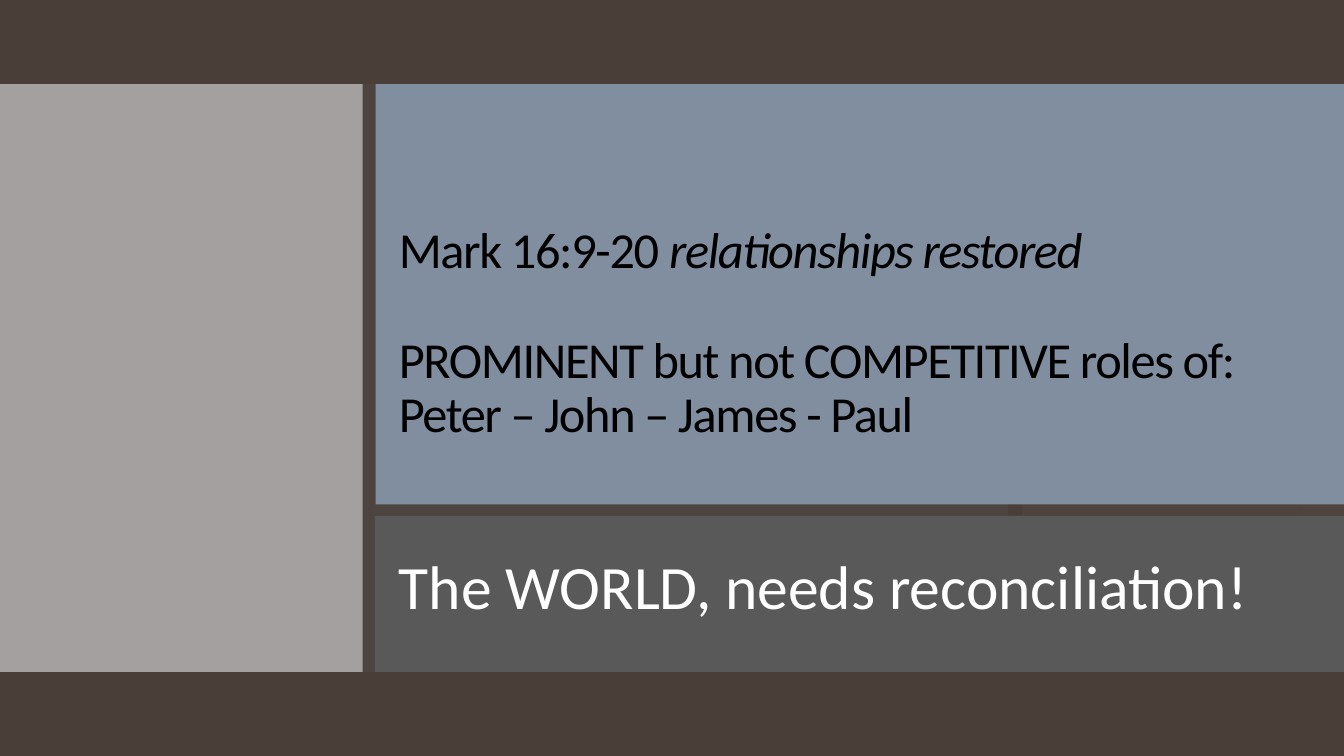
from dataclasses import dataclass

from lxml.etree import SubElement
from pptx import Presentation
from pptx.dml.color import RGBColor
from pptx.enum.shapes import MSO_SHAPE as Preset
from pptx.enum.text import MSO_ANCHOR as Anchor
from pptx.oxml.ns import qn
from pptx.util import Cm, Pt


@dataclass(frozen=True)
class Theme:
    """Colours, font and type sizes of the slide."""
    brown: str = "4A3F38"
    blue: str = "818E9F"
    silver: str = "C8C8C8"
    grey: str = "595959"
    black: str = "000000"
    white: str = "FFFFFF"
    font: str = "Calibri"
    title_size: int = 36
    body_size: int = 44


THEME = Theme()
WIDTH, HEIGHT = 33.87, 19.05
BAND_TOP, BAND_HEIGHT = 2.12, 14.81
TEXT_LEFT = 9.8


def add_panel(page, left, top, width, height, color, opacity=100):
    """Draw a borderless rectangle with an opacity in percent."""
    panel = page.shapes.add_shape(
        Preset.RECTANGLE, Cm(left), Cm(top), Cm(width), Cm(height))
    panel.shadow.inherit = False
    panel.line.fill.background()
    panel.fill.solid()
    panel.fill.fore_color.rgb = RGBColor.from_string(color)
    if opacity < 100:
        shade = panel.fill._xPr.find(qn("a:solidFill"))[0]
        SubElement(shade, qn("a:alpha"), val=str(opacity * 1000))


def add_text(page, top, width, height, lines, size, color, anchor, spacing=0):
    """Write lines, each a gap before in points and (text, italic) spans."""
    box = page.shapes.add_textbox(Cm(TEXT_LEFT), Cm(top), Cm(width), Cm(height))
    frame = box.text_frame
    frame.word_wrap = True
    frame.vertical_anchor = anchor
    for index, (gap, spans) in enumerate(lines):
        para = frame.add_paragraph() if index else frame.paragraphs[0]
        para.line_spacing = 0.9
        para.space_before = Pt(gap)
        para.font.name = THEME.font
        para.font.size = Pt(size)
        para.font.color.rgb = RGBColor.from_string(color)
        for text, italic in spans:
            span = para.add_run()
            span.text = text
            span.font.italic = italic
            if spacing:
                span.font._element.set("spc", str(spacing * 100))


def add_backdrop(page):
    """Lay the master bands and the brown veil that covers them."""
    page.background.fill.solid()
    page.background.fill.fore_color.rgb = RGBColor.from_string(THEME.brown)
    for left, right, color, opacity in (
            (0, 9.58, THEME.blue, 95),
            (32.82, WIDTH, THEME.blue, 40),
            (0, 25.4, THEME.blue, 100),
            (25.76, WIDTH, THEME.silver, 50)):
        add_panel(page, left, BAND_TOP, right - left, BAND_HEIGHT, color, opacity)
    add_panel(page, 0, 0, WIDTH, HEIGHT, THEME.brown, 93)


def main():
    """Build the slide and save it."""
    deck = Presentation()
    deck.slide_width, deck.slide_height = Cm(WIDTH), Cm(HEIGHT)
    page = deck.slides.add_slide(deck.slide_layouts[6])
    add_backdrop(page)
    add_panel(page, 0, BAND_TOP, 9.14, BAND_HEIGHT, THEME.silver, 70)
    add_panel(page, 9.47, BAND_TOP, WIDTH - 9.47, 10.59, THEME.blue)
    title = [
        (0, [("Mark 16:9-20 ", False), ("relationships restored", True)]),
        (39.5, [("PROMINENT but not COMPETITIVE roles of:", False)]),
        (0, [("Peter – John – James - Paul", False)]),
    ]
    add_text(page, 3.61, 23.83, 7.7, title, THEME.title_size, THEME.black,
             Anchor.BOTTOM, spacing=-1)
    add_panel(page, 9.45, 13, WIDTH - 9.45, 3.93, THEME.grey)
    body = [(0, [("The WORLD, needs reconciliation!", False)])]
    add_text(page, 13.89, 23.5, 2.13, body, THEME.body_size, THEME.white,
             Anchor.TOP)
    deck.save("out.pptx")


if __name__ == "__main__":
    main()
